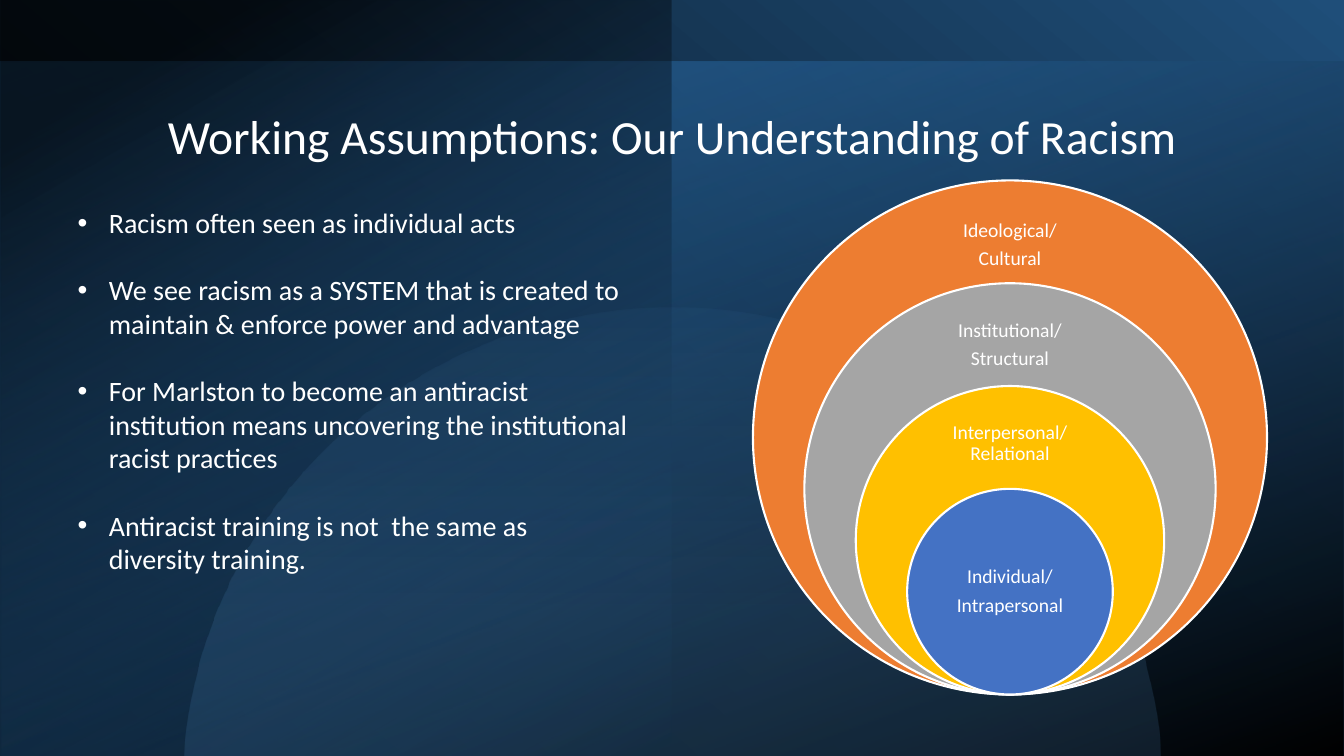
from pptx import Presentation
from pptx.dml.color import RGBColor
from pptx.enum.shapes import MSO_SHAPE
from pptx.enum.text import MSO_ANCHOR, MSO_AUTO_SIZE, PP_ALIGN
from pptx.oxml import parse_xml
from pptx.oxml.ns import nsdecls
from pptx.util import Inches, Pt

RECT, OVAL = MSO_SHAPE.RECTANGLE, MSO_SHAPE.OVAL
TOP, MIDDLE, BOTTOM = MSO_ANCHOR.TOP, MSO_ANCHOR.MIDDLE, MSO_ANCHOR.BOTTOM
LEFT, CENTER = PP_ALIGN.LEFT, PP_ALIGN.CENTER
NO_FIT = MSO_AUTO_SIZE.NONE

FONT = "Calibri"
WHITE = RGBColor(0xFF, 0xFF, 0xFF)
BLACK = RGBColor(0, 0, 0)
NAVY = RGBColor(0x1F, 0x4E, 0x79)
BLUE = RGBColor(0x2E, 0x75, 0xB6)
SKY = RGBColor(0x5B, 0x9B, 0xD5)
ORANGE = RGBColor(0xED, 0x7D, 0x31)
GRAY = RGBColor(0xA5, 0xA5, 0xA5)
GOLD = RGBColor(0xFF, 0xC0, 0x00)
ROYAL = RGBColor(0x44, 0x72, 0xC4)

WIDE, HIGH = 40 / 3, 7.5
TITLE = "Working Assumptions: Our Understanding of Racism"
POINTS = [
    "Racism often seen as individual acts",
    "We see racism as a SYSTEM that is created to maintain & enforce power and advantage",
    "For Marlston to become an antiracist institution means uncovering "
    "the institutional racist practices",
    "Antiracist training is not  the same as diversity training.",
]
# Fill, label lines, label top, label height
RINGS = [
    (ORANGE, ["Ideological/", "Cultural"], 2.05, 0.76),
    (GRAY, ["Institutional/", "Structural"], 3.06, 0.73),
    (GOLD, ["Interpersonal/Relational"], 4.06, 0.69),
    (ROYAL, ["Individual/", "Intrapersonal"], 5.36, 1.02),
]


def place(shape, box):
    shape.left, shape.top, shape.width, shape.height = map(Inches, box)


def shade(shape, stops, angle):
    """Fill with a gradient of (position, colour, opacity) stops, in percent."""
    marks = "".join(
        f'<a:gs pos="{pos * 1000}"><a:srgbClr val="{color}">'
        f'<a:alpha val="{alpha * 1000}"/></a:srgbClr></a:gs>'
        for pos, color, alpha in stops
    )
    grad = parse_xml(
        f'<a:gradFill {nsdecls("a")} rotWithShape="1"><a:gsLst>{marks}</a:gsLst>'
        f'<a:lin ang="{angle * 60000}" scaled="0"/></a:gradFill>'
    )
    shape.fill.background()
    props = shape._element.spPr
    props.replace(props.find("{*}noFill"), grad)
    shape.line.fill.background()
    shape.shadow.inherit = False


def add_panel(slide, box, stops, angle, flip):
    panel = slide.shapes.add_shape(RECT, *map(Inches, box))
    panel.rotation = 180
    if flip:
        panel._element.spPr.xfrm.set("flipH", "1")
    shade(panel, stops, angle)


def bend(shape, index, points):
    """Turn one straight segment of a freeform into a curve through handles."""
    line = shape._element.spPr.findall(".//{*}lnTo")[index]
    marks = "".join(
        f'<a:pt x="{Inches(x) - shape.left}" y="{Inches(y) - shape.top}"/>'
        for x, y in points
    )
    curve = parse_xml(f'<a:cubicBezTo {nsdecls("a")}>{marks}</a:cubicBezTo>')
    line.getparent().replace(line, curve)


def add_dome(slide):
    peak, right, left = (6.67, 3.05), (11.5, 7.32), (1.84, 7.32)
    ends = [right, (11.51, HIGH), (1.83, HIGH), left, peak]
    path = slide.shapes.build_freeform(*map(Inches, peak))
    path.add_line_segments([tuple(map(Inches, end)) for end in ends], close=True)
    dome = path.convert_to_shape()
    bend(dome, 4, [(2.09, 4.92), (4.15, 3.05), peak])
    bend(dome, 0, [(9.18, 3.05), (11.25, 4.92), right])
    shade(dome, [(0, SKY, 5), (68, SKY, 15)], 90)


def write(frame, lines, size, align, anchor, space=1.0, after=0):
    frame.word_wrap = True
    frame.auto_size = NO_FIT
    frame.vertical_anchor = anchor
    for i, line in enumerate(lines):
        para = frame.add_paragraph() if i else frame.paragraphs[0]
        para.alignment = align
        para.line_spacing = space
        para.space_before, para.space_after = Pt(0), Pt(after)
        run = para.add_run()
        run.text = line
        run.font.name, run.font.size = FONT, Pt(size)
        run.font.color.rgb = WHITE


def add_ring(slide, size, color):
    mid, base = 10.02, 6.89
    box = (mid - size / 2, base - size, size, size)
    ring = slide.shapes.add_shape(OVAL, *map(Inches, box))
    ring.shadow.inherit = False
    ring.fill.solid()
    ring.fill.fore_color.rgb = color
    ring.line.color.rgb = WHITE
    ring.line.width = Pt(1.5)


def add_label(slide, lines, top, height):
    box = slide.shapes.add_textbox(*map(Inches, (9.31, top, 1.42, height)))
    frame = box.text_frame
    frame.margin_left = frame.margin_right = Inches(0.11)
    frame.margin_top = frame.margin_bottom = Inches(0.11)
    write(frame, lines, 14, CENTER, MIDDLE, 0.9, 5)


def fill_title(title):
    place(title, (1.23, 0.49, 10.88, 1.19))
    write(title.text_frame, [TITLE], 34, CENTER, BOTTOM, 0.9)


def fill_list(body):
    place(body, (0.67, 1.99, 5.67, 3.8))
    write(body.text_frame, POINTS, 20, LEFT, TOP, after=24)
    for para in body.text_frame.paragraphs:
        props = para._p.get_or_add_pPr()
        props.set("marL", str(Inches(0.31)))
        props.set("indent", str(Inches(-0.31)))


def main():
    deck = Presentation()
    deck.slide_width, deck.slide_height = Inches(WIDE), Inches(HIGH)
    slide = deck.slides.add_slide(deck.slide_layouts[1])
    title, body = slide.placeholders

    add_panel(slide, (0, 0, WIDE, HIGH), [(0, NAVY, 100), (100, BLACK, 100)], 230, True)
    add_panel(slide, (0, 0.61, WIDE, 6.89), [(1, BLUE, 59), (100, BLACK, 100)], 250, False)
    add_panel(slide, (0, 0, WIDE / 2, HIGH), [(13, BLACK, 72), (99, NAVY, 0)], 300, True)
    slide.shapes._spTree.append(title._element)
    add_dome(slide)

    for i, (color, lines, top, height) in enumerate(RINGS):
        add_ring(slide, 5.1 * (1 - 0.2 * i), color)
        add_label(slide, lines, top, height)

    fill_title(title)
    fill_list(body)
    slide.shapes._spTree.append(body._element)
    deck.save("out.pptx")


if __name__ == "__main__":
    main()
